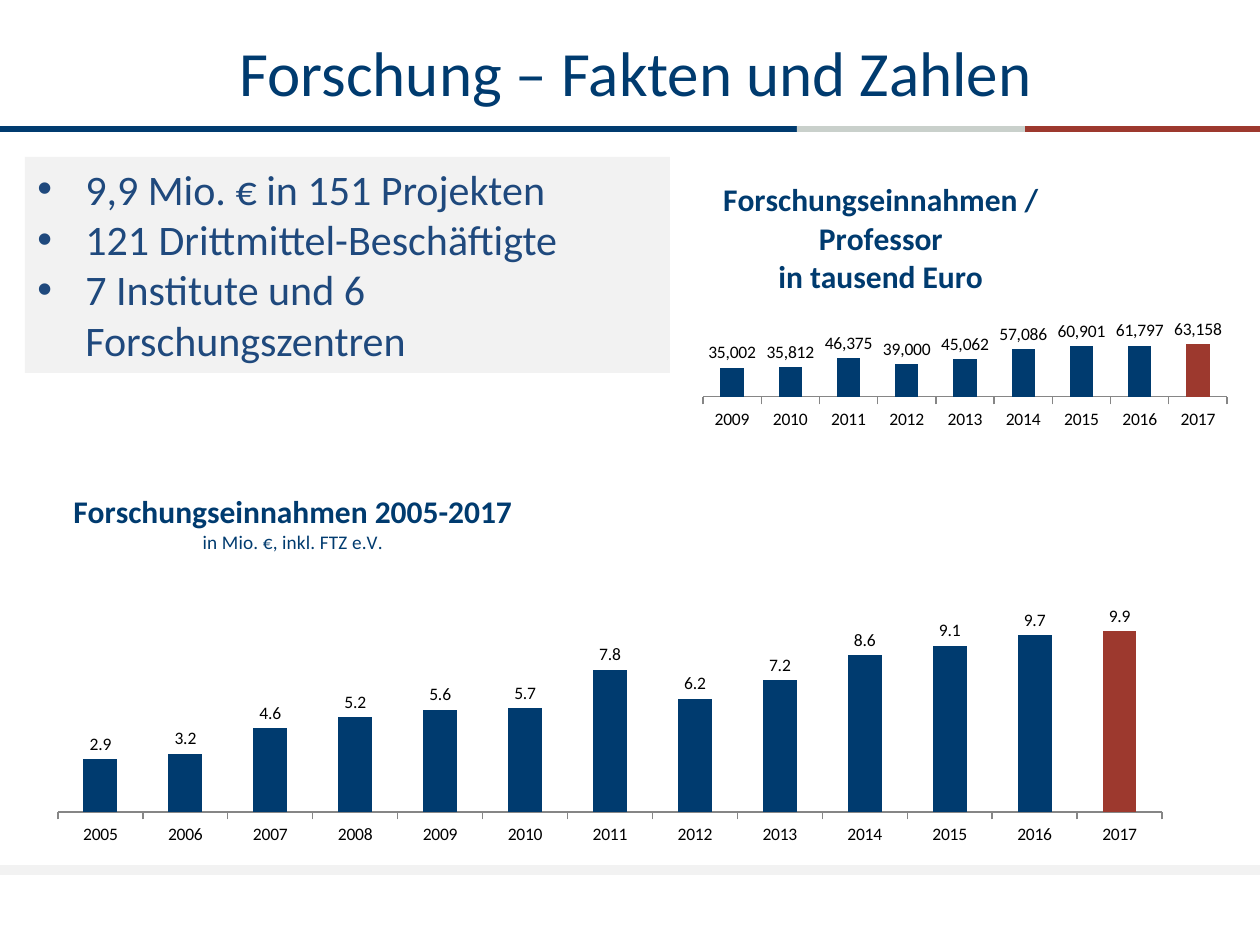
from dataclasses import dataclass

from lxml import etree
from pptx import Presentation
from pptx.chart.data import CategoryChartData
from pptx.dml.color import RGBColor
from pptx.enum.chart import XL_CHART_TYPE as ChartType
from pptx.enum.chart import XL_LABEL_POSITION as LabelPosition
from pptx.enum.chart import XL_TICK_MARK as TickMark
from pptx.enum.shapes import MSO_SHAPE as Shape
from pptx.enum.text import MSO_ANCHOR as Anchor
from pptx.enum.text import PP_ALIGN as Align
from pptx.oxml.ns import qn
from pptx.util import Emu, Pt

PX_PER_INCH = 126
NAVY, BLUE, RED = "003B6F", "1F497D", "9D392E"
SILVER, PALE, GREY, BLACK = "C9D0CB", "F2F2F2", "868686", "000000"
FONT = "Calibri"


@dataclass
class Box:
    left: int
    top: int
    width: int
    height: int

    def emu(self) -> list[Emu]:
        return [px(n) for n in (self.left, self.top, self.width, self.height)]


@dataclass
class TitleLine:
    text: str
    size: int
    bold: bool


@dataclass
class ColumnChart:
    box: Box
    title: list[TitleLine]
    title_at: dict[str, float]
    plot_at: dict[str, float]
    first_year: int
    values: list[float]
    maximum: int
    number_format: str


def px(count: int) -> Emu:
    return Emu(round(count * 914400 / PX_PER_INCH))


def color(value: str) -> RGBColor:
    return RGBColor.from_string(value)


def style_font(font, size: float, tint: str, bold: bool = False) -> None:
    for name, value in {"name": FONT, "size": Pt(size), "bold": bold}.items():
        setattr(font, name, value)
    font.color.rgb = color(tint)


def add_bar(page, box: Box, fill: str):
    bar = page.shapes.add_shape(Shape.RECTANGLE, *box.emu())
    bar.shadow.inherit = False
    bar.fill.solid()
    bar.fill.fore_color.rgb = color(fill)
    bar.line.fill.background()
    return bar


def add_bullet(para, tint: str) -> None:
    properties = para._p.get_or_add_pPr()
    properties.set("marL", str(px(48)))
    properties.set("indent", str(-px(48)))
    bullet_color = etree.SubElement(properties, qn("a:buClr"))
    etree.SubElement(bullet_color, qn("a:srgbClr"), val=tint)
    etree.SubElement(properties, qn("a:buFont"), typeface="Arial")
    etree.SubElement(properties, qn("a:buChar"), char="•")


def place_in_chart(parent, index: int, place: dict[str, float], inner: bool = False) -> None:
    """Give a chart part a manual layout in fractions of the chart."""
    for old in parent.findall(qn("c:layout")):
        parent.remove(old)
    layout = etree.Element(qn("c:layout"))
    manual = etree.SubElement(layout, qn("c:manualLayout"))
    if inner:
        etree.SubElement(manual, qn("c:layoutTarget"), val="inner")
    for axis in "xy":
        etree.SubElement(manual, qn(f"c:{axis}Mode"), val="edge")
    for name, value in place.items():
        etree.SubElement(manual, qn(f"c:{name}"), val=str(value))
    parent.insert(index, layout)


def add_column_chart(page, spec_: ColumnChart) -> None:
    data = CategoryChartData(number_format=spec_.number_format)
    data.categories = [str(spec_.first_year + i) for i in range(len(spec_.values))]
    data.add_series("Series 1", spec_.values)
    chart = page.shapes.add_chart(ChartType.COLUMN_CLUSTERED, *spec_.box.emu(), data).chart
    style_font(chart.font, 10, BLACK)
    chart.has_legend = False

    # Title
    frame = chart.chart_title.text_frame
    for i, line in enumerate(spec_.title):
        para = frame.add_paragraph() if i else frame.paragraphs[0]
        para.alignment = Align.CENTER
        span = para.add_run()
        span.text = line.text
        style_font(span.font, line.size, NAVY, line.bold)
    chart.chart_title.include_in_layout = False
    place_in_chart(chart.chart_title._element, 1, spec_.title_at)
    plot_area = chart._chartSpace.find(".//" + qn("c:plotArea"))
    place_in_chart(plot_area, 0, spec_.plot_at, inner=True)

    # Axes
    value_axis, category_axis = chart.value_axis, chart.category_axis
    axis_format = {"visible": False, "has_major_gridlines": False,
                   "minimum_scale": 0, "maximum_scale": spec_.maximum}
    for name, value in axis_format.items():
        setattr(value_axis, name, value)
    category_axis.major_tick_mark = TickMark.OUTSIDE
    category_axis.format.line.color.rgb = color(GREY)
    category_axis.format.line.width = Pt(0.75)

    # Columns, the latest year highlighted
    plot = chart.plots[0]
    plot.gap_width = 150
    plot.vary_by_categories = False
    series = plot.series[0]
    last = series.points[len(spec_.values) - 1]
    for part, tint in ((series, NAVY), (last, RED)):
        part.format.fill.solid()
        part.format.fill.fore_color.rgb = color(tint)
    plot.has_data_labels = True
    label_format = {"show_value": True, "position": LabelPosition.OUTSIDE_END,
                    "number_format": spec_.number_format,
                    "number_format_is_linked": False}
    for name, value in label_format.items():
        setattr(plot.data_labels, name, value)
    style_font(plot.data_labels.font, 10, BLACK)


STRIPES = [
    (Box(0, 126, 797, 6), NAVY),
    (Box(797, 126, 228, 6), SILVER),
    (Box(1025, 126, 235, 6), RED),
]
FACTS = [
    "9,9 Mio. € in 151 Projekten",
    "121 Drittmittel-Beschäftigte",
    "7 Institute und 6 Forschungszentren",
]
CHARTS = [
    ColumnChart(
        Box(35, 472, 1150, 378),
        [TitleLine("Forschungseinnahmen 2005-2017", 18, True),
         TitleLine("in Mio. €, inkl. FTZ e.V.", 11, False)],
        {"x": 0.03, "y": 0.04}, {"x": 0.02, "y": 0.32, "w": 0.96, "h": 0.58},
        2005, [2.9, 3.2, 4.6, 5.2, 5.6, 5.7, 7.8, 6.2, 7.2, 8.6, 9.1, 9.7, 9.9],
        12, "0.0"),
    ColumnChart(
        Box(692, 156, 546, 277),
        [TitleLine("Forschungseinnahmen / Professor", 18, True),
         TitleLine("in tausend Euro", 18, True)],
        {"x": 0.05, "y": 0.07}, {"x": 0.02, "y": 0.66, "w": 0.96, "h": 0.21},
        2009, [35002, 35812, 46375, 39000, 45062, 57086, 60901, 61797, 63158],
        70000, "#,##0"),
]


def main() -> None:
    deck = Presentation()
    deck.slide_width, deck.slide_height = px(1260), px(945)
    page = deck.slides.add_slide(deck.slide_layouts[5])

    # Footer rule and header stripes
    footer = add_bar(page, Box(0, 867, 1260, 6), PALE)
    footer.line.color.rgb = color(PALE)
    footer.line.width = Pt(2)
    for box, fill in STRIPES:
        add_bar(page, box, fill)

    # Title
    title = page.shapes.title
    title.left, title.top, title.width, title.height = Box(35, 16, 1201, 110).emu()
    title.text_frame.text = "Forschung – Fakten und Zahlen"
    title.text_frame.vertical_anchor = Anchor.MIDDLE
    heading = title.text_frame.paragraphs[0]
    heading.alignment = Align.CENTER
    style_font(heading.runs[0].font, 36, NAVY)

    # Key facts
    frame = add_bar(page, Box(25, 157, 645, 216), PALE).text_frame
    frame.word_wrap = True
    frame.vertical_anchor = Anchor.TOP
    for i, fact in enumerate(FACTS):
        para = frame.add_paragraph() if i else frame.paragraphs[0]
        para.alignment = Align.LEFT
        add_bullet(para, BLUE)
        span = para.add_run()
        span.text = fact
        style_font(span.font, 24, BLUE)

    for chart in CHARTS:
        add_column_chart(page, chart)
    deck.save("out.pptx")


if __name__ == "__main__":
    main()
